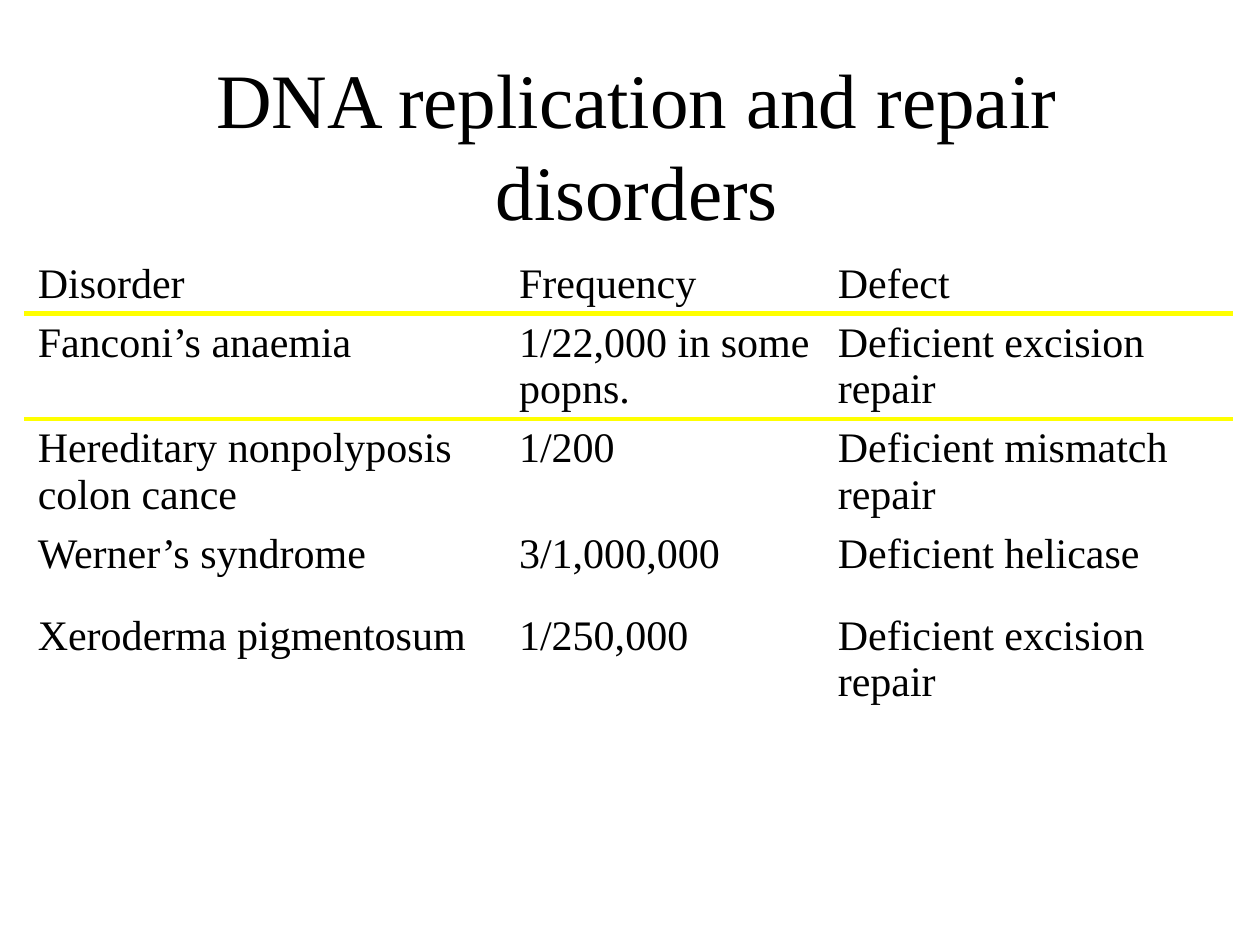
from lxml.etree import SubElement
from pptx import Presentation
from pptx.dml.color import RGBColor
from pptx.enum.text import MSO_ANCHOR, MSO_AUTO_SIZE, PP_ALIGN
from pptx.oxml.ns import qn
from pptx.util import Inches, Pt

TITLE = "DNA replication and repair disorders"
ROWS = [
    ("Disorder", "Frequency", "Defect"),
    ("Fanconi’s anaemia", "1/22,000 in some popns.", "Deficient excision repair"),
    ("Hereditary nonpolyposis colon cance", "1/200", "Deficient mismatch repair"),
    ("Werner’s syndrome", "3/1,000,000", "Deficient helicase"),
    ("Xeroderma pigmentosum", "1/250,000", "Deficient excision repair"),
]
COL_WIDTHS = (3.82, 2.53, 3.23)
HEADER_HEIGHT, ROW_HEIGHT = 0.42, 0.65
FONT = "Times New Roman"
BLACK = RGBColor(0x00, 0x00, 0x00)
YELLOW = RGBColor(0xFF, 0xFF, 0x00)


def set_font(p, size):
    p.font.name = FONT
    p.font.size = Pt(size)
    p.font.color.rgb = BLACK


def add_border(cell, side, color, width):
    """Draw one cell border; side is lnT or lnB."""
    tc_pr = cell._tc.get_or_add_tcPr()
    ln = SubElement(tc_pr, qn(f"a:{side}"), w=str(Pt(width)))
    fill = SubElement(ln, qn("a:solidFill"))
    SubElement(fill, qn("a:srgbClr"), val=str(color))
    tc_pr.insert(0, ln)


prs = Presentation()
prs.slide_width, prs.slide_height = Inches(10), Inches(7.5)
s = prs.slides.add_slide(prs.slide_layouts[5])

title = s.shapes.title
title.left, title.top = Inches(0.43), Inches(0.68)
title.width, title.height = Inches(9.25), Inches(0.92)
tf = title.text_frame
tf.text = TITLE
tf.word_wrap = True
tf.auto_size = MSO_AUTO_SIZE.NONE
tf.vertical_anchor = MSO_ANCHOR.MIDDLE
tf.paragraphs[0].alignment = PP_ALIGN.CENTER
set_font(tf.paragraphs[0], 44)

heights = [HEADER_HEIGHT] + [ROW_HEIGHT] * (len(ROWS) - 1)
table = s.shapes.add_table(
    len(ROWS), len(COL_WIDTHS), Inches(0.2), Inches(2.02),
    Inches(sum(COL_WIDTHS)), Inches(sum(heights))).table
table.first_row = table.horz_banding = False
for column, width in zip(table.columns, COL_WIDTHS):
    column.width = Inches(width)
for i, (row, texts) in enumerate(zip(table.rows, ROWS)):
    row.height = Inches(heights[i])
    for cell, text in zip(row.cells, texts):
        cell.text = text
        set_font(cell.text_frame.paragraphs[0], 24)
        cell.fill.background()
        if i < 2:
            add_border(cell, "lnT" if i else "lnB", YELLOW, 3)

prs.save("out.pptx")
